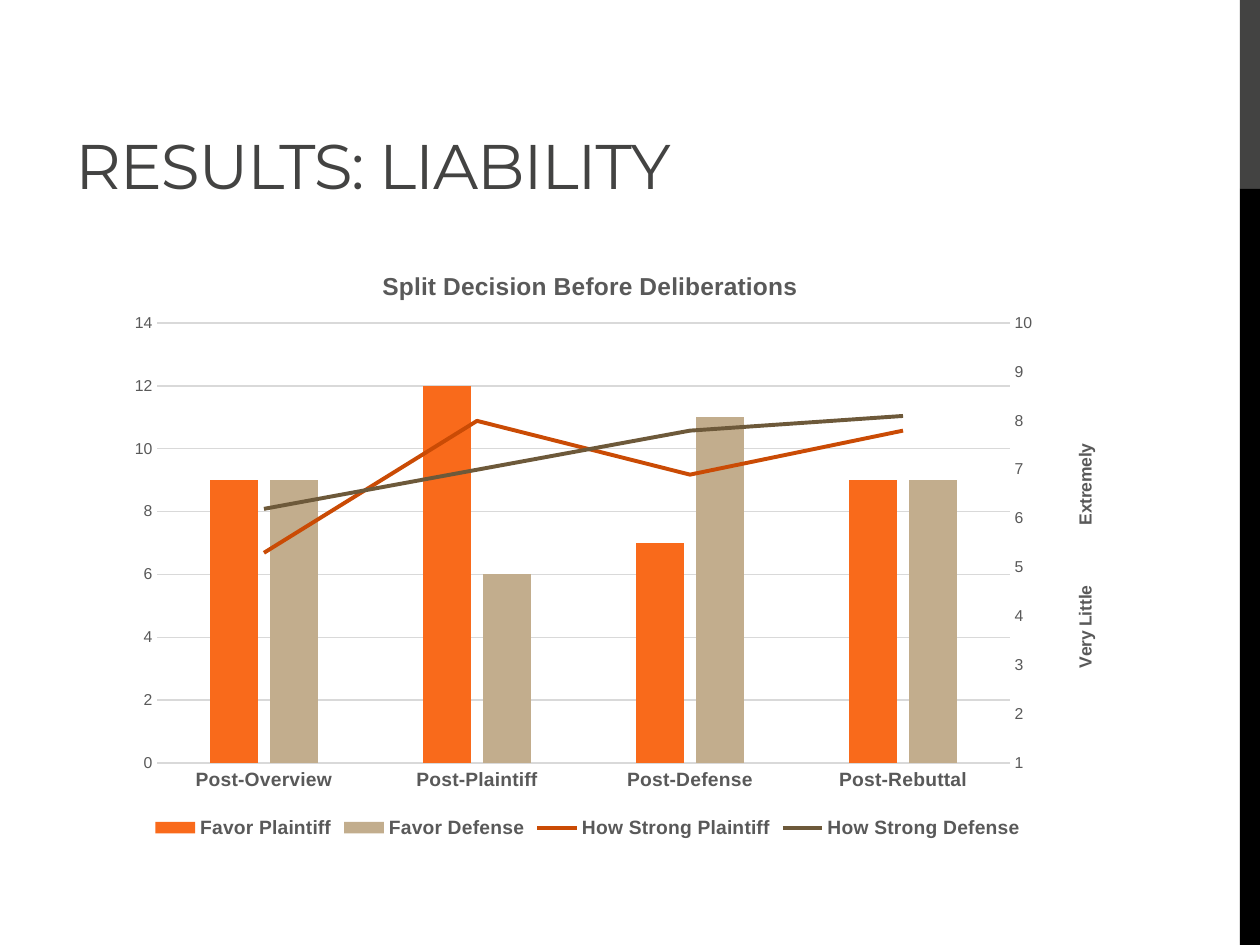
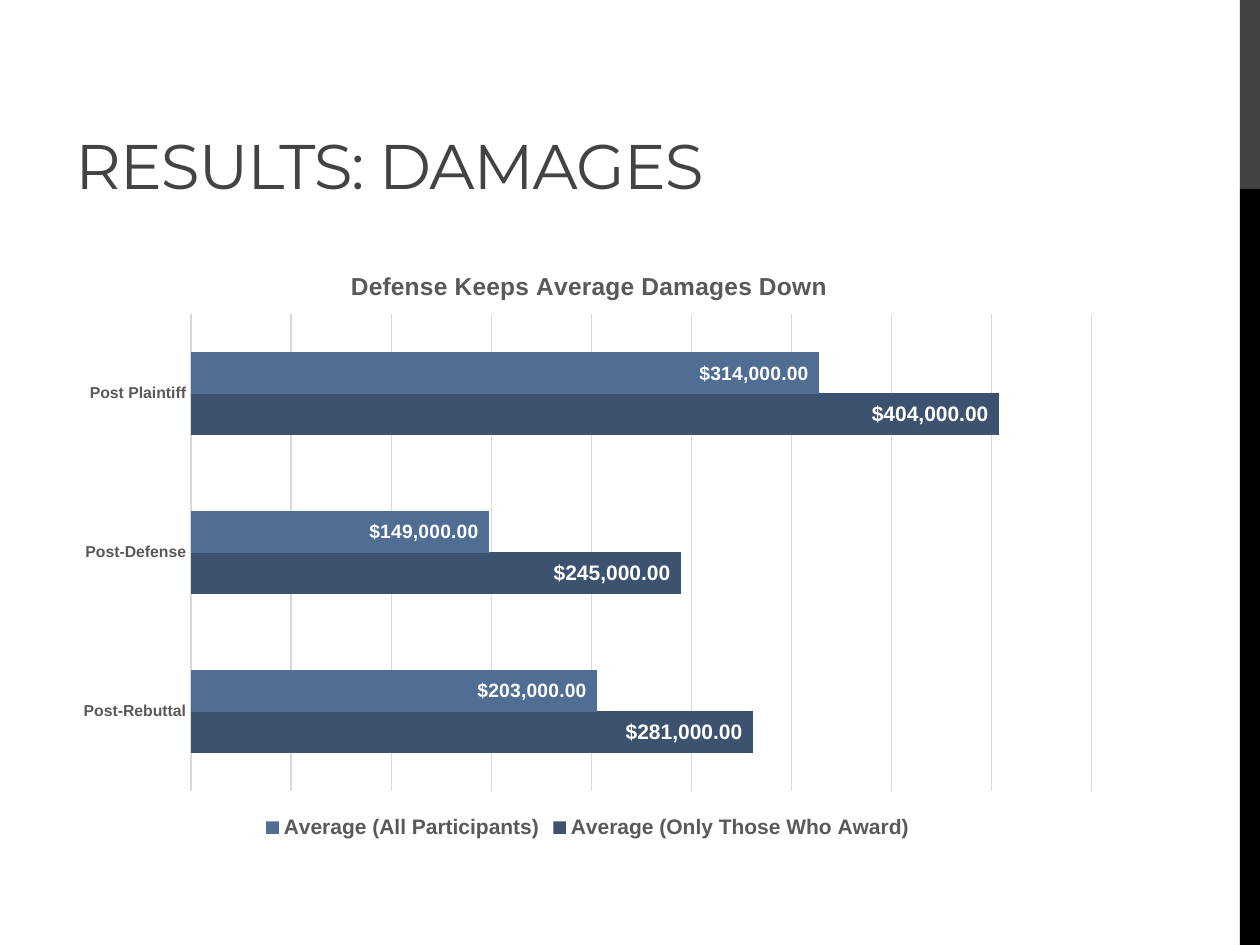
from copy import deepcopy
from dataclasses import dataclass

from pptx import Presentation
from pptx.chart.axis import CategoryAxis, ValueAxis
from pptx.chart.data import CategoryChartData
from pptx.dml.color import RGBColor
from pptx.enum.chart import (XL_CHART_TYPE, XL_LABEL_POSITION, XL_LEGEND_POSITION,
                             XL_MARKER_STYLE, XL_TICK_MARK)
from pptx.enum.shapes import MSO_SHAPE
from pptx.enum.text import MSO_ANCHOR
from pptx.oxml.ns import qn
from pptx.oxml.xmlchemy import OxmlElement
from pptx.util import Inches, Pt

COLUMNS, BARS = XL_CHART_TYPE.COLUMN_CLUSTERED, XL_CHART_TYPE.BAR_CLUSTERED
BOTTOM, INSIDE_END = XL_LEGEND_POSITION.BOTTOM, XL_LABEL_POSITION.INSIDE_END
NO_TICK, NO_MARKER = XL_TICK_MARK.NONE, XL_MARKER_STYLE.NONE
RECT, ANCHOR_BOTTOM = MSO_SHAPE.RECTANGLE, MSO_ANCHOR.BOTTOM


@dataclass(frozen=True)
class Theme:
    """Colours, fonts and type sizes that the slides share."""
    ink: str = "434342"
    black: str = "000000"
    white: str = "FFFFFF"
    label: str = "595959"
    rule: str = "D9D9D9"
    plaintiff: str = "F96A1B"
    defense: str = "C2AD8D"
    plaintiff_line: str = "CA4B05"
    defense_line: str = "6D593A"
    award: str = "3C526F"
    everyone: str = "506E94"
    head_font: str = "Montserrat"
    body_font: str = "Arial"
    head: int = 36
    chart_title: int = 14
    large: int = 12
    medium: int = 11
    base: int = 10
    small: int = 9


T = Theme()
WIDTH, HEIGHT = Inches(10), Inches(7.5)
MARGIN = 0.05
TITLE_BOX = (MARGIN, 0.02, 0.63, 0.2)
CHART_BOX = (MARGIN, 0.256, 0.833, 0.637)
BAND_LEFT, BAND_SPLIT = 0.984, 0.2
DOLLARS = '"$"#,##0.00_)'


def place(box):
    """Turn shares of the slide into left, top, width and height."""
    x, y, w, h = box
    return int(x * WIDTH), int(y * HEIGHT), int(w * WIDTH), int(h * HEIGHT)


def rgb(color):
    """Read a hex colour."""
    return RGBColor.from_string(color)


def style_font(font, size, color=T.label, bold=False, name=T.body_font):
    """Set face, size, weight and colour."""
    font.name, font.size, font.bold = name, Pt(size), bold
    font.color.rgb = rgb(color)


def add_text(slide, box, text, size=T.head, color=T.ink, name=T.head_font, spacing=-60):
    """Add one line of text standing on the bottom of its box."""
    tf = slide.shapes.add_textbox(*place(box)).text_frame
    tf.word_wrap, tf.vertical_anchor = True, ANCHOR_BOTTOM
    r = tf.paragraphs[0].add_run()
    r.text = text
    style_font(r.font, size, color, name=name)
    r.font._element.set("spc", str(spacing))


def add_band(slide, box, color):
    """Add a plain filled rectangle."""
    sp = slide.shapes.add_shape(RECT, *place(box))
    sp.shadow.inherit = False
    sp.fill.solid()
    sp.fill.fore_color.rgb = rgb(color)
    sp.line.fill.background()


def add_frame(prs, title):
    """Start a slide with its side bands and title."""
    slide = prs.slides.add_slide(prs.slide_layouts[6])
    add_band(slide, (BAND_LEFT, 0, 1 - BAND_LEFT, BAND_SPLIT), T.ink)
    add_band(slide, (BAND_LEFT, BAND_SPLIT, 1 - BAND_LEFT, 1 - BAND_SPLIT), T.black)
    add_text(slide, TITLE_BOX, title)
    return slide


def add_node(parent, tag, **attrs):
    """Append a chart XML element."""
    node = OxmlElement(f"c:{tag}")
    for key, value in attrs.items():
        node.set(key, value)
    parent.append(node)
    return node


def set_layout(parent, **shares):
    """Fix the place of a title or plot area in shares of the chart."""
    old = parent.find(qn("c:layout"))
    if old is not None:
        parent.remove(old)
    layout = OxmlElement("c:layout")
    manual = add_node(layout, "manualLayout")
    if "w" in shares:
        add_node(manual, "layoutTarget", val="inner")
    for mode in ("xMode", "yMode"):
        add_node(manual, mode, val="edge")
    for key, share in shares.items():
        add_node(manual, key, val=str(share))
    parent.insert(0 if parent.find(qn("c:tx")) is None else 1, layout)


def set_title(title, text, size, x, y, upright=False):
    """Write a chart or axis title and place it."""
    tf = title.text_frame
    tf.text = text
    style_font(tf.paragraphs[0].runs[0].font, size, bold=True)
    node = tf._txBody.getparent().getparent()
    if upright:
        body = node.find(".//" + qn("a:bodyPr"))
        body.set("rot", "-5400000")
        body.set("vert", "horz")
    set_layout(node, x=x, y=y)


def set_scale(axis, low, high, step):
    """Set the range of a value axis and hide its line."""
    axis.minimum_scale, axis.maximum_scale, axis.major_unit = low, high, step
    axis.major_tick_mark = axis.minor_tick_mark = NO_TICK
    axis.format.line.fill.background()
    style_font(axis.tick_labels.font, T.small)


def set_rule(line):
    """Draw a line as a thin grey rule."""
    line.color.rgb, line.width = rgb(T.rule), Pt(0.75)


def plot_area(chart):
    """Find the plot area of a chart."""
    return chart._chartSpace.find(".//" + qn("c:plotArea"))


def add_bars(slide, box, kind, cats, series, title, title_x, plot, scale,
             gap, overlap, cat_size, legend_size):
    """Add a clustered chart; series maps each name to values and colour."""
    data = CategoryChartData()
    data.categories = cats
    for name, (values, _) in series.items():
        data.add_series(name, values)
    chart = slide.shapes.add_chart(kind, *place(box), data).chart
    style_font(chart.font, T.base, T.black)
    chart.has_title = True
    set_title(chart.chart_title, title, T.chart_title, title_x, 0.04)
    chart.has_legend = True
    chart.legend.position, chart.legend.include_in_layout = BOTTOM, False
    style_font(chart.legend.font, legend_size, bold=True)

    bars = chart.plots[0]
    bars.gap_width, bars.overlap, bars.vary_by_categories = gap, overlap, False
    for s, (_, color) in zip(bars.series, series.values()):
        s.invert_if_negative = False
        s.format.fill.solid()
        s.format.fill.fore_color.rgb = rgb(color)

    cat_axis = chart.category_axis
    cat_axis.major_tick_mark = cat_axis.minor_tick_mark = NO_TICK
    set_rule(cat_axis.format.line)
    style_font(cat_axis.tick_labels.font, cat_size, bold=True)
    set_scale(chart.value_axis, *scale)
    chart.value_axis.has_major_gridlines = True
    set_rule(chart.value_axis.major_gridlines.format.line)
    x, y, w, h = plot
    set_layout(plot_area(chart), x=x, y=y, w=w, h=h)
    return chart


def move_to_lines(chart, first, colors):
    """Turn the series from first on into lines and return their right axis."""
    area = plot_area(chart)
    bars, cat, val = (area.find(qn(f"c:{t}")) for t in ("barChart", "catAx", "valAx"))
    lines = OxmlElement("c:lineChart")
    add_node(lines, "grouping", val="standard")
    add_node(lines, "varyColors", val="0")
    for ser in bars.findall(qn("c:ser"))[first:]:
        for tag in ("invertIfNegative", "spPr"):
            ser.remove(ser.find(qn(f"c:{tag}")))
        lines.append(ser)
    add_node(lines, "marker", val="1")

    right_cat, right_val = deepcopy(cat), deepcopy(val)
    for axis, own, other in ((right_cat, "5001", "5002"), (right_val, "5002", "5001")):
        axis.find(qn("c:axId")).set("val", own)
        axis.find(qn("c:crossAx")).set("val", other)
        add_node(lines, "axId", val=own)
    right_val.find(qn("c:axPos")).set("val", "r")
    right_val.find(qn("c:crosses")).set("val", "max")
    bars.addnext(lines)
    val.addnext(right_val)
    right_val.addnext(right_cat)
    CategoryAxis(right_cat).visible = False

    for s, color in zip(chart.plots[1].series, colors):
        s.smooth, s.marker.style = False, NO_MARKER
        s.format.line.color.rgb, s.format.line.width = rgb(color), Pt(2.25)
    right = ValueAxis(right_val)
    right.has_major_gridlines = False
    return right


def liability_slide(prs):
    """Votes as columns, strength of each case as lines."""
    slide = add_frame(prs, "RESULTS: LIABILITY")
    series = {
        "Favor Plaintiff": ((9, 12, 7, 9), T.plaintiff),
        "Favor Defense": ((9, 6, 11, 9), T.defense),
        "How Strong Plaintiff": ((5.3, 8, 6.9, 7.8), T.plaintiff_line),
        "How Strong Defense": ((6.2, 7, 7.8, 8.1), T.defense_line),
    }
    cats = ("Post-Overview", "Post-Plaintiff", "Post-Defense", "Post-Rebuttal")
    chart = add_bars(slide, CHART_BOX, COLUMNS, cats, series,
                     "Split Decision Before Deliberations", title_x=0.3,
                     plot=(0.09, 0.135, 0.812, 0.731), scale=(0, 14, 2),
                     gap=219, overlap=-27, cat_size=T.medium, legend_size=T.medium)
    right = move_to_lines(chart, 2, (T.plaintiff_line, T.defense_line))
    set_scale(right, 1, 10, 1)
    set_title(chart.value_axis.axis_title, "Number of Participants", T.base,
              0.03, 0.36, upright=True)
    set_title(right.axis_title, "Very Little \t\tExtremely", T.base,
              0.96, 0.33, upright=True)


def damages_slide(prs):
    """Average awards as labelled bars."""
    slide = add_frame(prs, "RESULTS: DAMAGES")
    series = {
        "Average (Only Those Who Award)": ((281000, 245000, 404000), T.award),
        "Average (All Participants)": ((203000, 149000, 314000), T.everyone),
    }
    cats = ("Post-Rebuttal", "Post-Defense", "Post Plaintiff")
    chart = add_bars(slide, CHART_BOX, BARS, cats, series,
                     "Defense Keeps Average Damages Down", title_x=0.27,
                     plot=(0.122, 0.12, 0.858, 0.792), scale=(0, 450000, 50000),
                     gap=182, overlap=1, cat_size=T.small, legend_size=T.large)
    chart.value_axis.visible = False
    for s, size in zip(chart.plots[0].series, (T.large, T.medium)):
        labels = s.data_labels
        labels.show_value, labels.position = True, INSIDE_END
        labels.number_format, labels.number_format_is_linked = DOLLARS, False
        style_font(labels.font, size, T.white, bold=True)


def main():
    """Build and save the slides."""
    prs = Presentation()
    prs.slide_width, prs.slide_height = WIDTH, HEIGHT
    liability_slide(prs)
    damages_slide(prs)
    prs.save("out.pptx")


if __name__ == "__main__":
    main()
